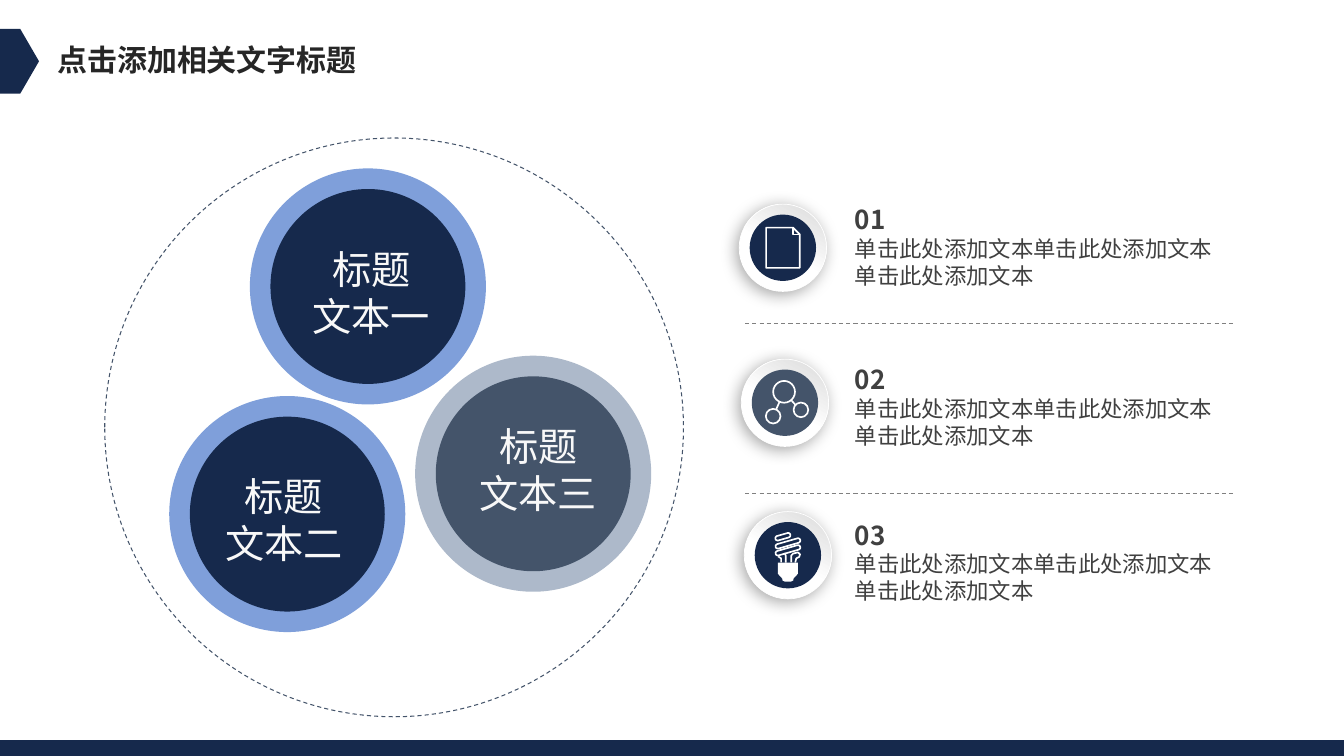
from lxml.etree import SubElement
from pptx import Presentation
from pptx.dml.color import RGBColor
from pptx.enum.dml import MSO_LINE_DASH_STYLE as Dash
from pptx.enum.shapes import MSO_CONNECTOR as Connector, MSO_SHAPE as Shape
from pptx.enum.text import MSO_ANCHOR as Anchor, MSO_AUTO_SIZE as AutoSize, PP_ALIGN as Align
from pptx.oxml.ns import qn
from pptx.util import Inches, Pt

COLUMNS, ROWS = 160, 90
CJK = "Noto Sans CJK SC"
COLORS = {
    "navy": "16294C", "slate": "44546A", "blue": "7F9FDA", "mist": "ADB9CA",
    "white": "FFFFFF", "silver": "D9D9D9", "gray": "808080", "label": "F8F8F8",
    "heading": "262626", "text": "404040", "shadow": "000000",
}


class Board:
    """Draws on one slide; lengths are columns and rows of a 160 by 90 grid."""

    def __init__(self, deck):
        self.slide = deck.slides.add_slide(deck.slide_layouts[5])
        self.shapes = self.slide.shapes
        self.column = deck.slide_width / COLUMNS
        self.row = deck.slide_height / ROWS

    def color(self, name):
        return RGBColor.from_string(COLORS[name])

    def point(self, x, y):
        return round(x * self.column), round(y * self.row)

    def box(self, x, y, width, height):
        return *self.point(x, y), *self.point(width, height)

    def paint(self, shape, fill=None, line=None, weight=0.75):
        shape.shadow.inherit = False
        if fill:
            shape.fill.solid()
            shape.fill.fore_color.rgb = self.color(fill)
        else:
            shape.fill.background()
        if line:
            shape.line.color.rgb = self.color(line)
            shape.line.width = Pt(weight)
        else:
            shape.line.fill.background()
        return shape

    def preset(self, kind, x, y, width, height, **style):
        return self.paint(self.shapes.add_shape(kind, *self.box(x, y, width, height)), **style)

    def centred(self, kind, center, width, height, **style):
        x, y = center
        return self.preset(kind, x - width / 2, y - height / 2, width, height, **style)

    def circle(self, center, diameter, **style):
        return self.centred(Shape.OVAL, center, diameter, diameter, **style)

    def outline(self, center, offsets, close=False, **style):
        """Joins points that are given relative to center."""
        first, *rest = [self.point(center[0] + dx, center[1] + dy) for dx, dy in offsets]
        builder = self.shapes.build_freeform(*first)
        builder.add_line_segments(rest, close=close)
        return self.paint(builder.convert_to_shape(), **style)

    def line(self, start, end, color, weight=0.75, dash=None):
        rule = self.shapes.add_connector(
            Connector.STRAIGHT, *self.point(*start), *self.point(*end))
        rule.line.color.rgb = self.color(color)
        rule.line.width = Pt(weight)
        if dash:
            rule.line.dash_style = dash
        SubElement(rule._element.spPr, qn("a:effectLst"))

    def font(self, paragraph, size, color, bold=False, name=CJK):
        font = paragraph.font
        font.name, font.size, font.bold = name, Pt(size), bold
        font.color.rgb = self.color(color)
        SubElement(font._element, qn("a:ea"), typeface=CJK)

    def text(self, x, y, width, height, lines, align=Align.LEFT, wrap=True, margins=(0.1, 0.05)):
        """Each line is a string with the arguments of its font."""
        frame = self.shapes.add_textbox(*self.box(x, y, width, height)).text_frame
        frame.word_wrap, frame.auto_size = wrap, AutoSize.SHAPE_TO_FIT_TEXT
        frame.margin_left = frame.margin_right = Inches(margins[0])
        frame.margin_top = frame.margin_bottom = Inches(margins[1])
        frame.text = "\n".join(words for words, _ in lines)
        for paragraph, (_, font) in zip(frame.paragraphs, lines):
            paragraph.alignment = align
            self.font(paragraph, **font)

    def title(self, words, x, y, width, height):
        heading = self.shapes.title
        heading.left, heading.top, heading.width, heading.height = self.box(x, y, width, height)
        frame = heading.text_frame
        frame.text = words
        frame.word_wrap, frame.auto_size = False, AutoSize.NONE
        frame.vertical_anchor = Anchor.MIDDLE
        paragraph = frame.paragraphs[0]
        paragraph.alignment, paragraph.line_spacing = Align.LEFT, 1.0
        self.font(paragraph, 21.4, "heading", bold=True)

    def disc(self, center, ring, core):
        self.circle(center, 28.1, fill=ring)
        self.circle(center, 23.2, fill=core)

    def badge(self, center, core):
        rim = self.circle(center, 10.4, line="white", weight=0.5)
        rim.fill.gradient()
        rim.fill.gradient_angle = 60
        stops = rim.fill.gradient_stops
        for stop, color, position in zip(stops, ("white", "silver"), (0.45, 1)):
            stop.color.rgb, stop.position = self.color(color), position
        effects = rim._element.spPr.find(qn("a:effectLst"))
        shadow = SubElement(effects, qn("a:outerShdw"), blurRad=str(Pt(12)), dist=str(Pt(3)),
                            dir=str(135 * 60000), algn="ctr", rotWithShape="0")
        tint = SubElement(shadow, qn("a:srgbClr"), val=COLORS["shadow"])
        SubElement(tint, qn("a:alpha"), val="34000")
        self.circle(center, 7.9, fill=core)


STROKE = {"line": "white", "weight": 1.2}


def draw_page(board, center):
    board.outline(center, [(-2, -2.4), (1.2, -2.4), (2, -1.6), (2, 2.4), (-2, 2.4)],
                  close=True, **STROKE)
    board.outline(center, [(1.2, -2.4), (1.2, -1.6), (2, -1.6)], **STROKE)


def draw_molecule(board, center):
    x, y = center
    for dx, dy, diameter in [(-0.1, -1.3, 2.6), (-1.4, 1.6, 1.75), (1.9, 0.85, 1.75)]:
        board.circle((x + dx, y + dy), diameter, **STROKE)
    for (x1, y1), (x2, y2) in [((-0.65, -0.1), (-1.05, 0.8)), ((0.75, -0.3), (1.25, 0.25))]:
        board.line((x + x1, y + y1), (x + x2, y + y2), "white", 1.2)


def draw_bulb(board, center):
    x, y = center
    for dx, dy, length in [(-0.6, -2.2, 1.85), (0, -1.4, 3.05), (0, -0.58, 3.05)]:
        coil = board.centred(Shape.ROUNDED_RECTANGLE, (x + dx, y + dy), length, 0.55, **STROKE)
        coil.adjustments[0] = 0.5
        coil.rotation = -16
    tubes = [
        [(-0.8, 0.87), (-0.8, 0.38), (-1.15, 0.15)],
        [(-0.26, 0.87), (-0.26, 0.03), (-0.4, -0.28)],
        [(0.4, 0.87), (0.4, 0.03), (0.65, -0.2), (1.2, -0.33), (1.45, -0.1),
         (1.35, 0.2), (1, 0.38), (0.88, 0.87)],
    ]
    for tube in tubes:
        board.outline(center, tube, **STROKE)
    right_side = [(1.2, 0.87), (1.2, 2.2), (0.65, 2.8), (0.65, 3), (0.35, 3.15)]
    left_side = [(-dx, dy) for dx, dy in reversed(right_side)]
    board.outline(center, right_side + left_side, close=True, fill="white")


DISCS = [  # centre, ring, core, label centre, last word
    ((34.2, 61.2), "blue", "navy", (33.8, 61.9), "文本二"),
    ((63.48, 56.4), "mist", "slate", (64.1, 55.9), "文本三"),
    ((43.8, 34.1), "blue", "navy", (44.2, 34.9), "文本一"),
]
ITEMS = [  # number, text top, badge centre, core, icon
    ("01", 23.64, (93.2, 29.5), "navy", draw_page),
    ("02", 42.7, (93.45, 47.95), "slate", draw_molecule),
    ("03", 61.2, (93.8, 66.1), "navy", draw_bulb),
]


def main():
    deck = Presentation()
    deck.slide_width, deck.slide_height = Inches(13.333), Inches(7.5)
    board = Board(deck)

    orbit = board.circle((46.92, 50.88), 68.9, line="slate")
    orbit.line.dash_style = Dash.DASH
    for center, ring, core, _, _ in DISCS:
        board.disc(center, ring, core)
    label_font = {"size": 28, "color": "label", "name": "Arial"}
    for _, _, _, (x, y), word in DISCS:
        board.text(x - 8.7, y - 6.5, 17.4, 13, [("标题", label_font), (word, label_font)],
                   align=Align.CENTER, wrap=False, margins=(0.13, 0.07))

    sentence = "单击此处添加文本"
    body_font = {"size": 16, "color": "text"}
    for number, top, center, core, draw_icon in ITEMS:
        board.text(100.6, top, 48.6, 11.4, [
            (number, {"size": 18.6, "color": "text", "bold": True}),
            (sentence * 2, body_font), (sentence, body_font)])
        board.badge(center, core)
        draw_icon(board, center)
    for y in (38.5, 58.7):
        board.line((88.7, y), (146.8, y), "gray", dash=Dash.DASH)

    marker = board.preset(Shape.PENTAGON, 0, 3.45, 4.65, 7.7, fill="navy")
    marker.adjustments[0] = 0.48
    board.title("点击添加相关文字标题", 5.64, 4.3, 38.4, 5.5)
    board.preset(Shape.RECTANGLE, 0, 88.1, COLUMNS, 1.9, fill="navy")
    deck.save("out.pptx")


if __name__ == "__main__":
    main()
